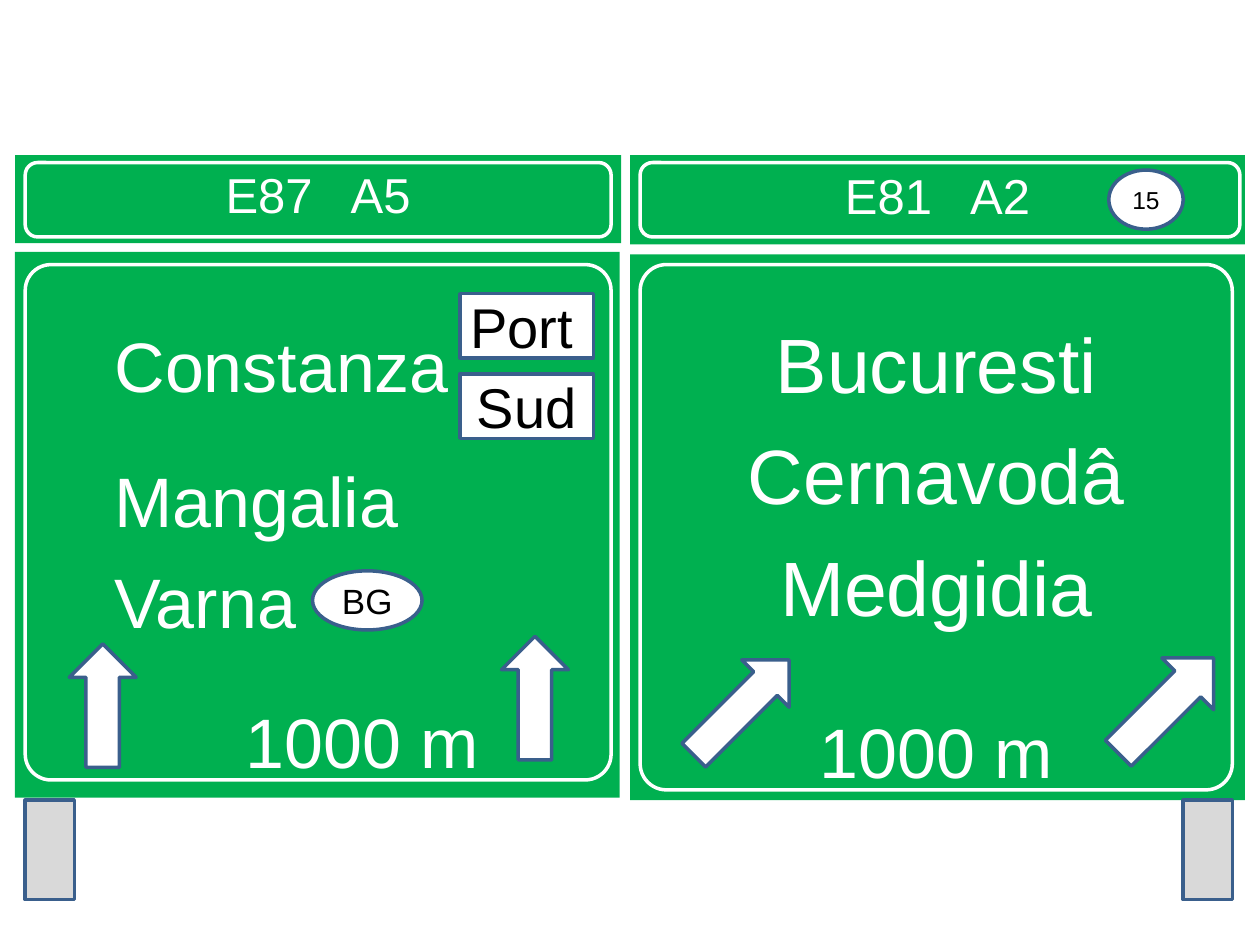
"""Build a slide with two motorway direction signs standing on posts."""
from dataclasses import dataclass
from typing import NamedTuple, Optional

from pptx import Presentation
from pptx import util as u
from pptx.dml.color import RGBColor
from pptx.enum import shapes, text

KIND = shapes.MSO_SHAPE
ALIGN = text.PP_ALIGN
ANCHOR = text.MSO_ANCHOR


@dataclass(frozen=True)
class Theme:
    font: str = "Arial"
    green: str = "00B050"
    white: str = "FFFFFF"
    black: str = "000000"
    edge: str = "3A5F8C"
    post: str = "D9D9D9"
    edge_width: float = 2
    route: float = 28
    town: float = 40
    large_town: float = 44
    plate: float = 32
    country: float = 20
    exit: float = 14


THEME = Theme()


class Box(NamedTuple):
    left: float
    top: float
    width: float
    height: float


class Insets(NamedTuple):
    left: float = 7.2
    top: float = 3.6
    right: float = 7.2
    bottom: float = 3.6


class Line(NamedTuple):
    wording: str
    size: float
    before: float = 0
    align: ALIGN = ALIGN.CENTER


@dataclass(frozen=True)
class Part:
    box: Box
    kind: KIND = KIND.RECTANGLE
    fill: Optional[str] = THEME.white
    edge: Optional[str] = THEME.edge
    rotation: float = 0
    corner: Optional[float] = None
    lines: tuple[Line, ...] = ()
    ink: str = THEME.black
    anchor: ANCHOR = ANCHOR.MIDDLE
    insets: Insets = Insets()
    wrap: bool = True


def board(box: Box, lines: tuple[Line, ...], anchor: ANCHOR, insets: Insets) -> Part:
    """Describe a green board with white lettering."""
    return Part(box, fill=THEME.green, edge=None, lines=lines,
                ink=THEME.white, anchor=anchor, insets=insets)


def route(box: Box, wording: str) -> Part:
    """Describe the board that carries the road numbers."""
    return board(box, (Line(wording, THEME.route),), ANCHOR.BOTTOM, Insets(bottom=11.5))


def frame(box: Box, corner: Optional[float] = None) -> Part:
    """Describe the white rounded outline inside a board."""
    return Part(box, KIND.ROUNDED_RECTANGLE, fill=None, edge=THEME.white, corner=corner)


def badge(box: Box, kind: KIND, wording: str, size: float) -> Part:
    """Describe a white badge with a short code."""
    return Part(box, kind, lines=(Line(wording, size),), wrap=False)


def plate(top: float, wording: str, insets: Insets = Insets()) -> Part:
    """Describe a white plate naming a district."""
    return Part(Box(262.8, top, 76.3, 36.7), lines=(Line(wording, THEME.plate),), insets=insets)


def ahead(left: float, top: float) -> Part:
    """Describe an arrow pointing straight ahead."""
    return Part(Box(left, top, 38.2, 70.6), KIND.UP_ARROW)


def bear_right(left: float, top: float, height: float) -> Part:
    """Describe an arrow pointing up and to the right."""
    return Part(Box(left, top, 77, height), KIND.RIGHT_ARROW, rotation=315)


def post(left: float) -> Part:
    """Describe a grey post below the boards."""
    return Part(Box(left, 457.2, 28.1, 56.9), fill=THEME.post)


SIGNS = (
    route(Box(8.6, 88.6, 346.3, 50.4), "E87   A5"),
    board(Box(8.6, 144, 345.6, 311.8), (
        Line("Constanza", THEME.town, align=ALIGN.LEFT),
        Line("Mangalia", THEME.town, 29, ALIGN.LEFT),
        Line("Varna", THEME.town, 10, ALIGN.LEFT),
        Line("1000 m", THEME.town, 32),
    ), ANCHOR.TOP, Insets(left=56.9, top=40.4, right=5.8)),
    route(Box(360, 88.6, 351.4, 51.1), "E81   A2"),
    board(Box(360, 145.4, 351.4, 311.8), (
        Line("Bucuresti", THEME.large_town),
        Line("Cernavodâ", THEME.large_town, 11),
        Line("Medgidia", THEME.large_town, 11),
        Line("1000 m", THEME.town, 44),
    ), ANCHOR.TOP, Insets(left=5.8, top=35.3)),
    ahead(39.6, 367.9),
    bear_right(385.2, 385.2, 38.2),
    bear_right(627.8, 382.3, 41.8),
    plate(213.8, "Sud"),
    post(14.4),
    ahead(286.6, 363.6),
    plate(167.8, "Port", Insets(left=0, right=5.8)),
    badge(Box(178.6, 326.2, 62.6, 33.8), KIND.OVAL, "BG", THEME.country),
    post(676.1),
    badge(Box(633.6, 97.2, 42.5, 33.8), KIND.FLOWCHART_CONNECTOR, "15", THEME.exit),
    frame(Box(14.4, 92.9, 334.8, 42.5)),
    frame(Box(365.8, 92.9, 342.7, 42.5)),
    frame(Box(14.4, 151.2, 334.8, 294.5), 0.05),
    frame(Box(365.8, 151.2, 338.4, 300.2), 0.05),
)


def letter(lettering, part: Part) -> None:
    """Write the lines of a part into its text frame."""
    lettering.word_wrap = part.wrap
    lettering.vertical_anchor = part.anchor
    lettering.margin_left, lettering.margin_top, lettering.margin_right, lettering.margin_bottom = (
        u.Pt(inset) for inset in part.insets)
    for index, line in enumerate(part.lines):
        paragraph = lettering.add_paragraph() if index else lettering.paragraphs[0]
        paragraph.text = line.wording
        paragraph.alignment = line.align
        paragraph.space_before = u.Pt(line.before)
        paragraph.font.name = THEME.font
        paragraph.font.size = u.Pt(line.size)
        paragraph.font.color.rgb = RGBColor.from_string(part.ink)


def draw(slide, part: Part) -> None:
    """Draw one part of the signs."""
    shape = slide.shapes.add_shape(part.kind, *(u.Pt(length) for length in part.box))
    shape.shadow.inherit = False
    shape.rotation = part.rotation
    if part.corner is not None:
        shape.adjustments[0] = part.corner
    if part.fill:
        shape.fill.solid()
        shape.fill.fore_color.rgb = RGBColor.from_string(part.fill)
    else:
        shape.fill.background()
    if part.edge:
        shape.line.color.rgb = RGBColor.from_string(part.edge)
        shape.line.width = u.Pt(THEME.edge_width)
    else:
        shape.line.fill.background()
    if part.lines:
        letter(shape.text_frame, part)


def main() -> None:
    """Create the presentation and save it."""
    deck = Presentation()
    deck.slide_width, deck.slide_height = u.Pt(720), u.Pt(540)
    slide = deck.slides.add_slide(deck.slide_layouts[6])
    for part in SIGNS:
        draw(slide, part)
    deck.save("out.pptx")


if __name__ == "__main__":
    main()
